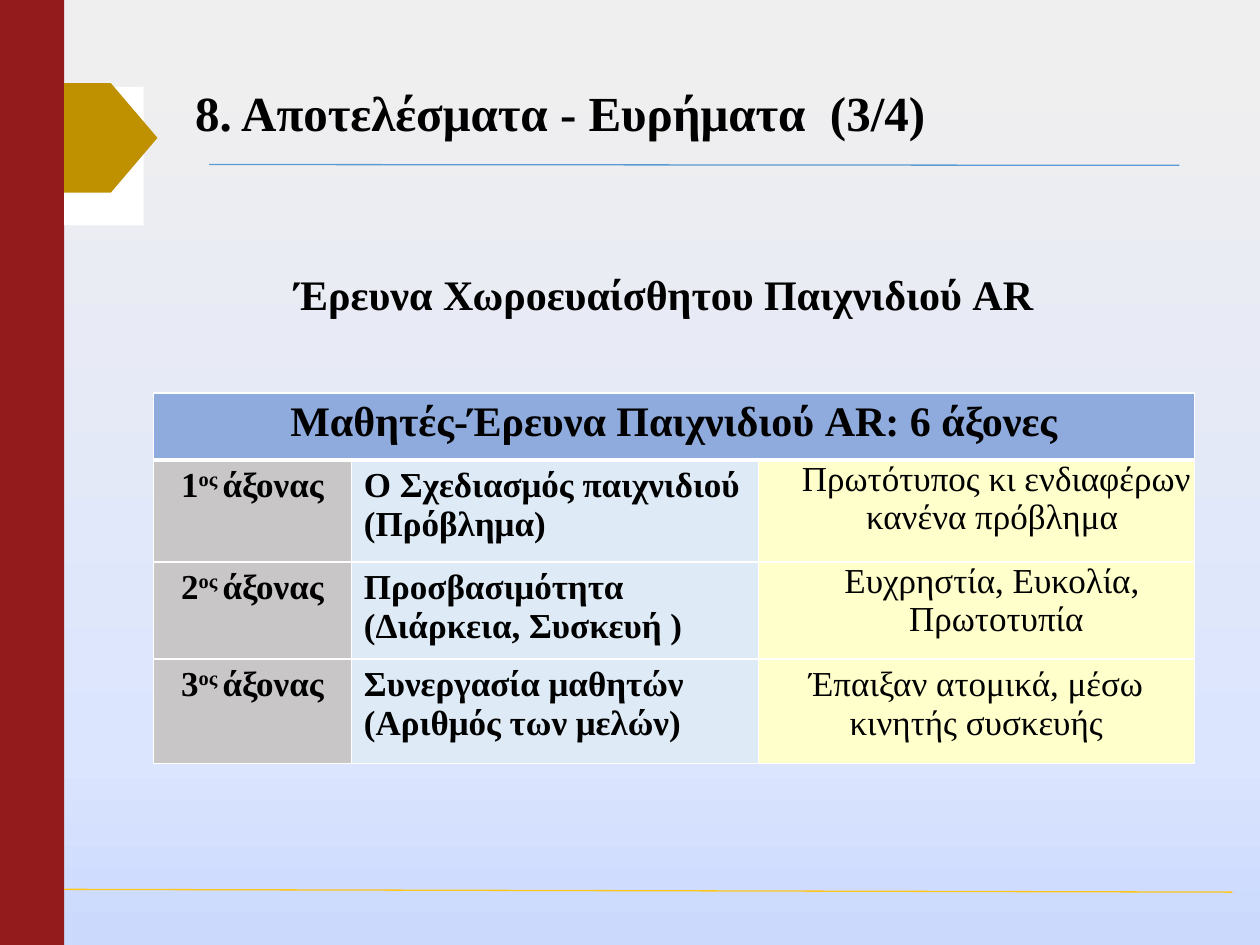
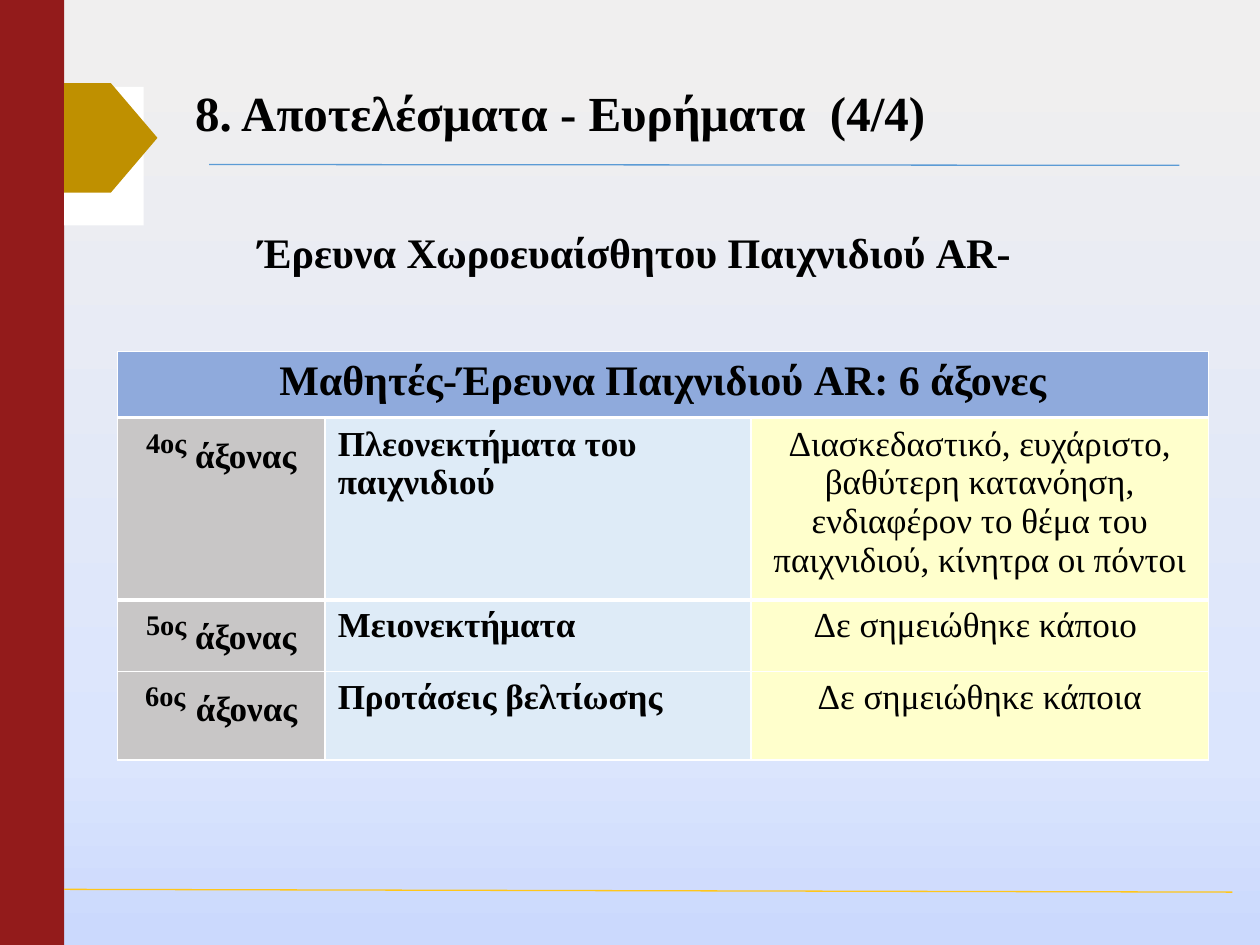
from dataclasses import dataclass

from lxml import etree
from pptx import Presentation
from pptx.dml.color import RGBColor
from pptx.enum.shapes import MSO_CONNECTOR, MSO_SHAPE
from pptx.enum.text import MSO_ANCHOR, PP_ALIGN
from pptx.oxml.ns import qn
from pptx.util import Pt

RECTANGLE = MSO_SHAPE.RECTANGLE
PENTAGON = MSO_SHAPE.PENTAGON
STRAIGHT = MSO_CONNECTOR.STRAIGHT
MIDDLE = MSO_ANCHOR.MIDDLE
LEFT, CENTER = PP_ALIGN.LEFT, PP_ALIGN.CENTER


@dataclass(frozen=True)
class Theme:
    font: str = "Times New Roman"
    title_size: int = 28
    heading_size: int = 24
    body_size: int = 20
    ordinal_size: int = 28
    ink: str = "000000"
    white: str = "FFFFFF"
    band: str = "931B1B"
    marker: str = "BF9000"
    title_rule: str = "5B9BD5"
    footer_rule: str = "FFC61A"
    header: str = "8FAADC"
    axis: str = "C8C6C6"
    topic: str = "DEEBF7"
    finding: str = "FFFFCC"
    backdrop: tuple = ((5, "F0EFEF"), (80, "DBE5FD"), (99, "CBD9FD"))
    thin: float = 1
    heavy: float = 3
    rule: float = 0.75


THEME = Theme()


@dataclass(frozen=True)
class Piece:
    text: str
    size: int = THEME.body_size
    bold: bool = True
    raised: bool = False


@dataclass(frozen=True)
class Entry:
    paragraphs: list
    fill: str
    align: int = CENTER
    indent: float = 0
    tight: bool = False


def color(code):
    return RGBColor.from_string(code)


def paint_backdrop(slide):
    fill = slide.background.fill
    fill.gradient()
    fill.gradient_angle = 270
    stops = slide._element.find(".//" + qn("a:gsLst"))
    for stop in list(stops):
        stops.remove(stop)
    for position, code in THEME.backdrop:
        stop = etree.SubElement(stops, qn("a:gs"), pos=str(position * 1000))
        etree.SubElement(stop, qn("a:srgbClr"), val=code)


def add_block(slide, preset, box, fill):
    block = slide.shapes.add_shape(preset, *map(Pt, box))
    block.shadow.inherit = False
    block.fill.solid()
    block.fill.fore_color.rgb = color(fill)
    block.line.fill.background()


def add_rule(slide, ends, code):
    rule = slide.shapes.add_connector(STRAIGHT, *map(Pt, ends))
    rule.line.color.rgb = color(code)
    rule.line.width = Pt(THEME.rule)
    etree.SubElement(rule._element.spPr, qn("a:effectLst"))


def write_runs(paragraph, pieces):
    for piece in pieces:
        run = paragraph.add_run()
        run.text = piece.text
        run.font.name = THEME.font
        run.font.size = Pt(piece.size)
        run.font.bold = piece.bold
        run.font.color.rgb = color(THEME.ink)
        if piece.raised:
            run._r.get_or_add_rPr().set("baseline", "30000")


def add_heading(slide, box, text, size):
    frame = slide.shapes.add_textbox(*map(Pt, box)).text_frame
    frame.word_wrap = True
    write_runs(frame.paragraphs[0], [Piece(text, size)])
    return frame


def set_borders(cell, top, bottom):
    properties = cell._tc.get_or_add_tcPr()
    widths = {"L": THEME.thin, "R": THEME.thin, "T": top, "B": bottom}
    for index, (side, width) in enumerate(widths.items()):
        border = etree.Element(qn(f"a:ln{side}"), w=str(Pt(width)))
        solid = etree.SubElement(border, qn("a:solidFill"))
        etree.SubElement(solid, qn("a:srgbClr"), val=THEME.white)
        properties.insert(index, border)


def fill_cell(cell, entry):
    cell.fill.solid()
    cell.fill.fore_color.rgb = color(entry.fill)
    if entry.tight:
        cell.margin_left = cell.margin_right = 0
        cell.margin_top = cell.margin_bottom = 0
    for index, pieces in enumerate(entry.paragraphs):
        frame = cell.text_frame
        paragraph = frame.add_paragraph() if index else frame.paragraphs[0]
        paragraph.alignment = entry.align
        if entry.indent:
            paragraph._p.get_or_add_pPr().set("marL", str(Pt(entry.indent)))
        write_runs(paragraph, pieces)


def add_axes_table(slide, origin, widths, heights, rows):
    size = sum(widths), sum(heights)
    table = slide.shapes.add_table(
        len(heights), len(widths), *map(Pt, (*origin, *size))).table
    table.first_row = table.horz_banding = False
    for column, width in zip(table.columns, widths):
        column.width = Pt(width)
    for row, height in zip(table.rows, heights):
        row.height = Pt(height)
    for r, entries in enumerate(rows):
        for c in range(len(widths)):
            top = THEME.heavy if r == 1 else THEME.thin
            bottom = THEME.heavy if r == 0 else THEME.thin
            set_borders(table.cell(r, c), top, bottom)
        if len(entries) < len(widths):
            table.cell(r, 0).merge(table.cell(r, len(widths) - 1))
        for c, entry in enumerate(entries):
            fill_cell(table.cell(r, c), entry)


def header_row(text):
    return [Entry([[Piece(text, THEME.heading_size)]], THEME.header)]


def axis_row(ordinal, topic, findings, **layout):
    return [
        Entry([ordinal], THEME.axis),
        Entry([[Piece(topic)]], THEME.topic, LEFT),
        Entry([[Piece(line, bold=False)] for line in findings],
              THEME.finding, **layout),
    ]


def small_ordinal(number):
    return [Piece(number), Piece("ος ", raised=True), Piece("άξονας")]


def large_ordinal(number, gap_size=THEME.body_size):
    return [Piece(number + "ος", THEME.ordinal_size, raised=True),
            Piece(" ", gap_size), Piece("άξονας")]


def add_base_slide(deck, part):
    slide = deck.slides.add_slide(deck.slide_layouts[6])
    paint_backdrop(slide)
    add_block(slide, RECTANGLE, (0, 0, 36.7, 540), THEME.band)
    add_rule(slide, (119.5, 94, 673.9, 94.5), THEME.title_rule)
    add_rule(slide, (36.7, 508.2, 704.2, 509.8), THEME.footer_rule)
    add_block(slide, RECTANGLE, (36.7, 49.6, 45.4, 79.2), THEME.white)
    add_block(slide, PENTAGON, (36.7, 47.5, 53.3, 62.6), THEME.marker)
    title = add_heading(slide, (104.4, 43.2, 612, 45.4),
                        f"8. Αποτελέσματα - Ευρήματα  ({part}/4)",
                        THEME.title_size)
    title.vertical_anchor = MIDDLE
    title.paragraphs[0].line_spacing = 0.9
    return slide


def main():
    deck = Presentation()
    deck.slide_width, deck.slide_height = Pt(720), Pt(540)
    survey = "Έρευνα Χωροευαίσθητου Παιχνιδιoύ AR"
    header = header_row("Μαθητές-Έρευνα Παιχνιδιoύ AR: 6 άξονες")
    header_height = 38.2
    inset = {"indent": 23, "tight": True}

    first_axes = add_base_slide(deck, 3)
    add_heading(first_axes, (161.3, 149.8, 452.9, 36), survey,
                THEME.heading_size)
    add_axes_table(
        first_axes, (87.8, 224.6), (113, 232.6, 249.1),
        (header_height, 58.3, 55.4, 59.8),
        [header,
         axis_row(small_ordinal("1"), "Ο Σχεδιασμός παιχνιδιού (Πρόβλημα)",
                  ["Πρωτότυπος κι ενδιαφέρων κανένα πρόβλημα "], **inset),
         axis_row(small_ordinal("2"),
                  "Προσβασιμότητα (Διάρκεια, Συσκευή )",
                  ["Ευχρηστία, Ευκολία, ", "Πρωτοτυπία"], **inset),
         axis_row(small_ordinal("3"),
                  "Συνεργασία μαθητών (Αριθμός των μελών)",
                  ["Έπαιξαν ατομικά, μέσω κινητής συσκευής"])])

    last_axes = add_base_slide(deck, 4)
    add_heading(last_axes, (140.4, 126, 548.6, 36), survey + "-",
                THEME.heading_size)
    left, top = 67, 200.9
    widths = (118.8, 243.4, 261.4)
    add_axes_table(last_axes, (left, top), (sum(widths),),
                   (header_height,), [header])
    add_axes_table(
        last_axes, (left, top + header_height), widths, (103.7, 41, 50.4),
        [axis_row(large_ordinal("4"), "Πλεονεκτήματα του παιχνιδιού",
                  ["Διασκεδαστικό, ευχάριστο, βαθύτερη κατανόηση, ενδιαφέρον "
                   "το θέμα του παιχνιδιού, κίνητρα οι πόντοι"]),
         axis_row(large_ordinal("5"), "Μειονεκτήματα",
                  ["Δε σημειώθηκε κάποιο "]),
         axis_row(large_ordinal("6", THEME.heading_size),
                  "Προτάσεις βελτίωσης", ["Δε σημειώθηκε κάποια"])])

    deck.save("out.pptx")


if __name__ == "__main__":
    main()
